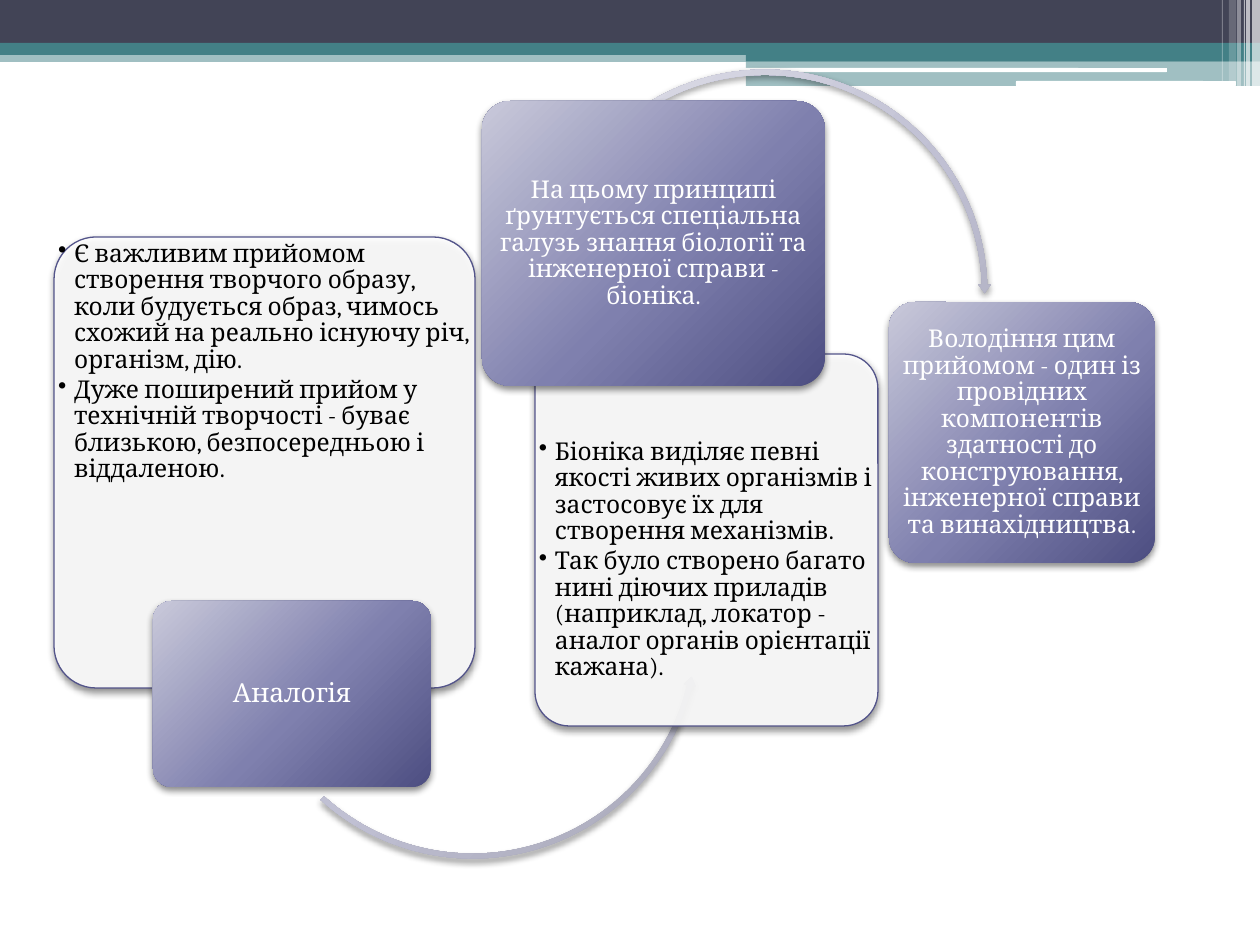
from lxml import etree
from pptx import Presentation
from pptx.dml.color import RGBColor
from pptx.enum.shapes import MSO_SHAPE
from pptx.enum.text import MSO_ANCHOR, PP_ALIGN
from pptx.oxml.ns import qn
from pptx.util import Emu, Pt

RECT, ROUND = MSO_SHAPE.RECTANGLE, MSO_SHAPE.ROUNDED_RECTANGLE
ARC, LEFT_ARC = MSO_SHAPE.CIRCULAR_ARROW, MSO_SHAPE.LEFT_CIRCULAR_ARROW
TOP, MIDDLE = MSO_ANCHOR.TOP, MSO_ANCHOR.MIDDLE
LEFT, CENTER = PP_ALIGN.LEFT, PP_ALIGN.CENTER

PX = 914400 / 126
FONT = "Cambria"
COLORS = {"white": "FFFFFF", "black": "000000", "navy": "424456",
          "teal": "438086", "violet": "53548A"}
NODE_GRADIENT = [(0, "C9C9DA"), (55, "7F80AE"), (100, "4D4E81")]
ARC_GRADIENT = [(0, "E1E1EA"), (55, "C0C0D3"), (100, "A7A7B7")]

# (box in px, shape, colour, opacity in percent)
HEADER = [
    ((0, 50, 1260, 12), RECT, "teal", 50),
    ((0, 0, 1260, 43), RECT, "navy", 100),
    ((0, 43, 1260, 12), RECT, "teal", 100),
    ((746, 49, 514, 12), RECT, "teal", 100),
    ((746, 61, 514, 25), RECT, "teal", 50),
    ((745, 68, 422, 4), ROUND, "white", 100),
    ((1016, 81, 220, 5), ROUND, "white", 100),
]
# (left, width, height, opacity)
STRIPES = [(1252, 8, 86, 65), (1246, 4, 86, 65), (1244, 1, 86, 60),
           (1237, 4, 86, 40), (1229, 7, 81, 20), (1222, 1, 81, 30)]

# Each step, from back to front; any part may be absent
STEPS = [
    {
        "panel": (54, 237, 421, 451),
        "bullets_box": (54, 237, 421, 355),
        "bullets": [
            "Є важливим прийомом створення творчого образу, коли будується образ, "
            "чимось схожий на реально існуючу річ, організм, дію.",
            "Дуже поширений прийом у технічній творчості - буває близькою, "
            "безпосередньою і віддаленою.",
        ],
        "arc": (LEFT_ARC, (243, 403, 459, 459), (0.011, 1.343, 8.2, 79.347, 0.013)),
        "node": (153, 601, 278, 186),
        "title": "Аналогія",
        "size": 15,
    },
    {
        "panel": (535, 354, 343, 372),
        "bullets_box": (535, 435, 343, 292),
        "bullets": [
            "Біоніка виділяє певні якості живих організмів і застосовує їх для "
            "створення механізмів.",
            "Так було створено багато нині діючих приладів (наприклад, локатор - "
            "аналог органів орієнтації кажана).",
        ],
        "arc": (ARC, (539, 66, 452, 452), (0.012, 1.362, 214.84, 143.712, 0.014)),
        "node": (482, 101, 343, 285),
        "title": "На цьому принципі ґрунтується спеціальна галузь знання біології "
                 "та інженерної справи - біоніка.",
        "size": 14,
    },
    {
        "node": (889, 302, 266, 261),
        "title": "Володіння цим прийомом - один із провідних компонентів здатності "
                 "до конструювання, інженерної справи та винахідництва.",
        "size": 14,
    },
]


def px(value):
    return Emu(round(value * PX))


def child(parent, tag, **attributes):
    element = etree.SubElement(parent, qn(tag))
    for name, value in attributes.items():
        element.set(name, str(value))
    return element


def add_shape(page, kind, box, adjustments=()):
    shape = page.shapes.add_shape(kind, *map(px, box))
    shape.shadow.inherit = False
    shape.line.fill.background()
    for index, value in enumerate(adjustments):
        shape.adjustments[index] = value
    return shape


def fill_solid(shape, color, opacity=100):
    shape.fill.solid()
    shape.fill.fore_color.rgb = RGBColor.from_string(COLORS[color])
    if opacity < 100:
        clr = shape.fill._xPr.find(qn("a:solidFill"))[0]
        child(clr, "a:alpha", val=opacity * 1000)


def fill_gradient(shape, stops):
    """Radial gradient centred far above and left of the shape."""
    shape.fill.gradient()
    gradient = shape.fill._xPr.find(qn("a:gradFill"))
    for element in list(gradient):
        gradient.remove(element)
    stop_list = child(gradient, "a:gsLst")
    for position, color in stops:
        child(child(stop_list, "a:gs", pos=position * 1000), "a:srgbClr", val=color)
    circle = child(gradient, "a:path", path="circle")
    child(circle, "a:fillToRect", l=-40000, t=-90000, r=140000, b=190000)


def add_shadow(shape):
    effects = shape._element.spPr.find(qn("a:effectLst"))
    shadow = child(effects, "a:outerShdw", blurRad=Pt(4), dist=Pt(2),
                   dir=90 * 60000, algn="ctr", rotWithShape=0)
    child(child(shadow, "a:srgbClr", val=COLORS["black"]), "a:alpha", val=45000)


def write(shape, paragraphs, size=14, color="black", align=LEFT, anchor=TOP,
          inset=0, bullet=False):
    frame = shape.text_frame
    frame.word_wrap = True
    frame.vertical_anchor = anchor
    frame.margin_left = frame.margin_right = px(inset)
    frame.margin_top = frame.margin_bottom = px(inset)
    for index, text in enumerate(paragraphs):
        para = frame.add_paragraph() if index else frame.paragraphs[0]
        para.alignment = align
        para.line_spacing = 0.9
        if bullet:
            para.space_after = Pt(2)
            properties = para._p.get_or_add_pPr()
            properties.set("marL", str(px(16)))
            properties.set("indent", str(-px(16)))
            child(properties, "a:buChar", char="•")
        span = para.add_run()
        span.text = text
        span.font.name = FONT
        span.font.size = Pt(size)
        span.font.color.rgb = RGBColor.from_string(COLORS[color])


def add_step(page, step):
    if "panel" in step:
        panel = add_shape(page, ROUND, step["panel"], [0.1])
        fill_solid(panel, "white", 90)
        panel.line.color.rgb = RGBColor.from_string(COLORS["violet"])
        panel.line.width = Pt(0.75)
        add_shadow(panel)
        bullets = page.shapes.add_textbox(*map(px, step["bullets_box"]))
        write(bullets, step["bullets"], inset=4, bullet=True)
    if "arc" in step:
        arc = add_shape(page, *step["arc"])
        fill_gradient(arc, ARC_GRADIENT)
        add_shadow(arc)
    node = add_shape(page, ROUND, step["node"], [0.1])
    fill_gradient(node, NODE_GRADIENT)
    add_shadow(node)
    write(node, [step["title"]], size=step["size"], color="white",
          align=CENTER, anchor=MIDDLE)


def main():
    deck = Presentation()
    deck.slide_width, deck.slide_height = px(1260), px(945)
    page = deck.slides.add_slide(deck.slide_layouts[6])
    stripes = [((left, 0, width, height), RECT, "white", opacity)
               for left, width, height, opacity in STRIPES]
    for box, kind, color, opacity in HEADER + stripes:
        fill_solid(add_shape(page, kind, box), color, opacity)
    for step in STEPS:
        add_step(page, step)
    deck.save("out.pptx")


if __name__ == "__main__":
    main()
